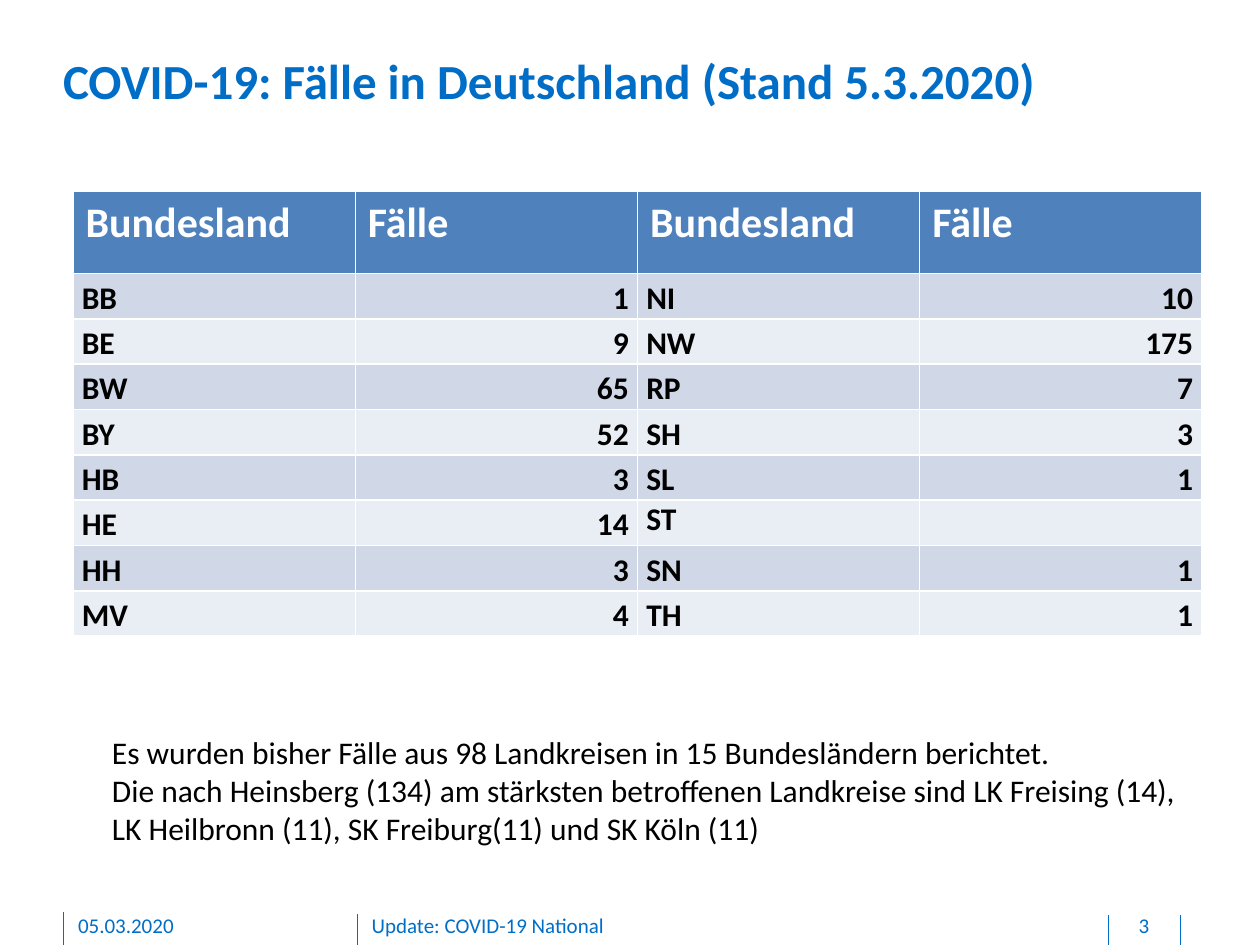
from dataclasses import dataclass

from lxml.etree import SubElement
from pptx import Presentation
from pptx.dml.color import RGBColor
from pptx.enum.shapes import MSO_CONNECTOR as Connector
from pptx.enum.text import MSO_ANCHOR as Anchor, PP_ALIGN as Align
from pptx.oxml.ns import qn
from pptx.util import Inches, Pt


@dataclass(frozen=True)
class Theme:
    font: str = "Calibri"
    accent: str = "006EC7"
    text: str = "000000"
    header_text: str = "FFFFFF"
    header_fill: str = "4F81BD"
    bands: tuple = ("D0D8E8", "E9EDF4")
    title_size: int = 28
    header_size: int = 24
    body_size: int = 18
    footer_size: int = 12


def apply(target, values):
    for name, value in values.items():
        setattr(target, name, value)


class SlideBuilder:
    def __init__(self, slide, theme):
        self.slide = slide
        self.theme = theme

    def add_text(self, paragraph, text, size, color, bold=False, **layout):
        apply(paragraph, layout)
        run = paragraph.add_run()
        run.text = text
        apply(run.font, {"name": self.theme.font, "size": Pt(size), "bold": bold})
        run.font.color.rgb = RGBColor.from_string(color)

    def frame(self, shape, margins):
        left, top, right, bottom = map(Inches, margins)
        apply(shape.text_frame, {
            "word_wrap": True, "vertical_anchor": Anchor.TOP,
            "margin_left": left, "margin_top": top,
            "margin_right": right, "margin_bottom": bottom,
        })
        return shape.text_frame

    def title(self, text, left, top, width, height):
        shape = self.slide.shapes.title
        apply(shape, {"left": Inches(left), "top": Inches(top),
                      "width": Inches(width), "height": Inches(height)})
        frame = self.frame(shape, (0, 0, 0, 0))
        self.add_text(frame.paragraphs[0], text, self.theme.title_size,
                      self.theme.accent, True, alignment=Align.LEFT)

    def text_box(self, lines, box, margins, size, color, align=Align.LEFT):
        shape = self.slide.shapes.add_textbox(*map(Inches, box))
        frame = self.frame(shape, margins)
        for index, line in enumerate(lines):
            paragraph = frame.add_paragraph() if index else frame.paragraphs[0]
            self.add_text(paragraph, line, size, color, alignment=align)

    def footer(self, text, left, width, align=Align.LEFT):
        self.text_box([text], (left, 7.24, width, 0.21), (0, 0, 0, 0.05),
                      self.theme.footer_size, self.theme.accent, align)

    def divider(self, x, top):
        line = self.slide.shapes.add_connector(
            Connector.STRAIGHT, Inches(x), Inches(top), Inches(x), Inches(7.5))
        line.line.color.rgb = RGBColor.from_string(self.theme.accent)
        line.line.width = Pt(0.5)
        SubElement(line._element.spPr, qn("a:effectLst"))

    def fill_cell(self, cell, color):
        cell.fill.solid()
        cell.fill.fore_color.rgb = RGBColor.from_string(color)

    def table(self, headers, rows, left, top, column_width, header_height, row_height):
        theme = self.theme
        table = self.slide.shapes.add_table(
            len(rows) + 1, len(headers), Inches(left), Inches(top),
            Inches(column_width * len(headers)),
            Inches(header_height + row_height * len(rows))).table
        for column in table.columns:
            column.width = Inches(column_width)
        for index, row in enumerate(table.rows):
            row.height = Inches(row_height if index else header_height)
        for column, header in enumerate(headers):
            cell = table.cell(0, column)
            self.fill_cell(cell, theme.header_fill)
            self.add_text(cell.text_frame.paragraphs[0], header,
                          theme.header_size, theme.header_text, True)
        for index, values in enumerate(rows):
            for column, value in enumerate(values):
                cell = table.cell(index + 1, column)
                self.fill_cell(cell, theme.bands[index % 2])
                apply(cell, {"margin_left": Inches(0.07), "margin_top": 0,
                             "margin_right": Inches(0.07), "margin_bottom": 0})
                if not value:
                    continue
                layout = {"alignment": Align.RIGHT if column % 2 else Align.LEFT}
                if value != "ST":
                    layout.update(line_spacing=1.15, space_after=Pt(6))
                self.add_text(cell.text_frame.paragraphs[0], value,
                              theme.body_size, theme.text, True, **layout)


CASES = [
    ("BB", "1", "NI", "10"),
    ("BE", "9", "NW", "175"),
    ("BW", "65", "RP", "7"),
    ("BY", "52", "SH", "3"),
    ("HB", "3", "SL", "1"),
    ("HE", "14", "ST", ""),
    ("HH", "3", "SN", "1"),
    ("MV", "4", "TH", "1"),
]
SUMMARY = [
    "Es wurden bisher Fälle aus 98 Landkreisen in 15 Bundesländern berichtet.",
    "Die nach Heinsberg (134) am stärksten betroffenen Landkreise sind LK Freising (14),",
    "LK Heilbronn (11), SK Freiburg(11) und SK Köln (11)",
]


def main():
    presentation = Presentation()
    apply(presentation, {"slide_width": Inches(10), "slide_height": Inches(7.5)})
    theme = Theme()
    slide = presentation.slides.add_slide(presentation.slide_layouts[5])
    builder = SlideBuilder(slide, theme)

    for x, top in ((2.84, 7.25), (0.5, 7.24), (9.37, 7.26), (8.8, 7.26)):
        builder.divider(x, top)
    builder.footer("Update: COVID-19 National", 2.95, 5.67)
    builder.footer("3", 8.81, 0.54, Align.CENTER)
    builder.title("COVID-19: Fälle in Deutschland (Stand 5.3.2020)", 0.5, 0.4, 8.85, 0.47)
    builder.table(["Bundesland", "Fälle"] * 2, CASES, 0.58, 1.52, 2.24, 0.65, 0.36)
    builder.footer("05.03.2020", 0.62, 2.03)
    builder.text_box(SUMMARY, (0.79, 5.77, 8.81, 1.32), (0.1, 0.05, 0.1, 0.05),
                     theme.body_size, theme.text)
    presentation.save("out.pptx")


if __name__ == "__main__":
    main()
